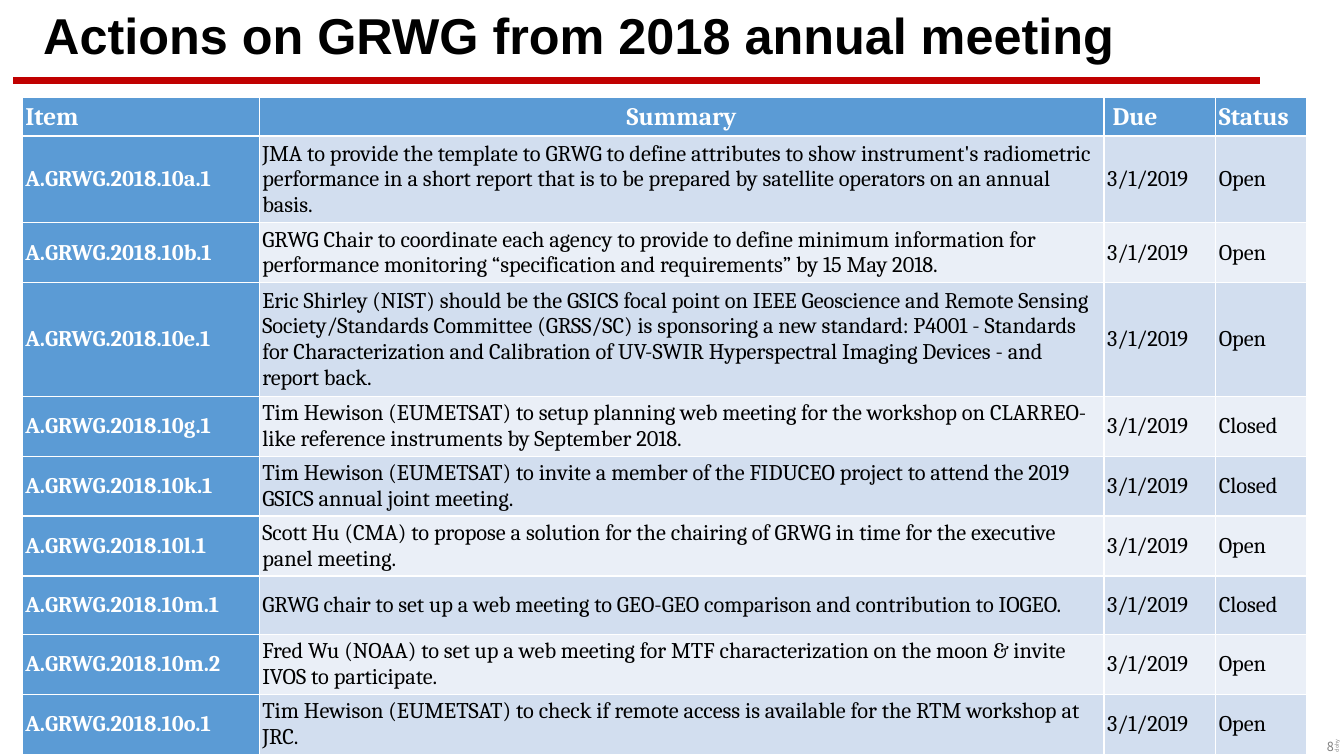
from pptx import Presentation
from pptx.dml.color import RGBColor
from pptx.enum.shapes import MSO_CONNECTOR
from pptx.enum.text import MSO_ANCHOR, PP_ALIGN
from pptx.oxml.ns import qn
from pptx.util import Pt
from lxml.etree import SubElement

# Content
TITLE = "Actions on GRWG from 2018 annual meeting"
HEAD = ("Item", "Summary", " Due", "Status")
DUE = "3/1/2019"
# Item suffix, summary, status, row height
ACTS = [
    ("10a.1", "JMA to provide the template to GRWG to define attributes to show instrument's "
     "radiometric performance in a short report that is to be prepared by satellite "
     "operators on an annual basis.", "Open", 60.5),
    ("10b.1", "GRWG Chair to coordinate each agency to provide to define minimum information for "
     "performance monitoring “specification and requirements” by 15 May 2018.", "Open", 41.8),
    ("10e.1", "Eric Shirley (NIST) should be the GSICS focal point on IEEE Geoscience and Remote "
     "Sensing Society/Standards Committee (GRSS/SC) is sponsoring a new standard: P4001 - "
     "Standards for Characterization and Calibration of UV-SWIR Hyperspectral Imaging "
     "Devices - and report back.", "Open", 78.5),
    ("10g.1", "Tim Hewison (EUMETSAT) to setup planning web meeting for the workshop on "
     "CLARREO-like reference instruments by September 2018.", "Closed", 41.8),
    ("10k.1", "Tim Hewison (EUMETSAT) to invite a member of the FIDUCEO project to attend the "
     "2019 GSICS annual joint meeting.", "Closed", 41.8),
    ("10l.1", "Scott Hu (CMA) to propose a solution for the chairing of GRWG in time for the "
     "executive panel meeting.", "Open", 41.8),
    ("10m.1", "GRWG chair to set up a web meeting to GEO-GEO comparison and contribution to "
     "IOGEO.", "Closed", 41.8),
    ("10m.2", "Fred Wu (NOAA) to set up a web meeting for MTF characterization on the moon & "
     "invite IVOS to participate.", "Open", 41.8),
    ("10o.1", "Tim Hewison (EUMETSAT) to check if remote access is available for the RTM "
     "workshop at JRC.", "Open", 41.8),
]
WIDTHS = (169.2, 603.4, 79.9, 64.8)
HUES = {"black": "000000", "white": "FFFFFF", "red": "C00000", "gray": "808080",
        "blue": "5B9BD5", "dark": "D2DEEF", "light": "EAEFF7"}

# Format values
NOTE = "Noto Sans CJK KR"
FONTS = {
    "title": {"name": "Arial", "size": Pt(36), "bold": True},
    "head": {"name": "Cambria", "size": Pt(18), "bold": True},
    "item": {"name": "Cambria", "size": Pt(16), "bold": True},
    "body": {"name": "Cambria", "size": Pt(16), "bold": False},
    "page": {"name": NOTE, "size": Pt(9)},
    "mark": {"name": NOTE, "size": Pt(3.8)},
}
PAD = {"margin_left": Pt(2.2), "margin_right": Pt(2.2), "margin_top": Pt(2.2),
       "margin_bottom": Pt(2.2), "vertical_anchor": MSO_ANCHOR.MIDDLE}


def shade(hue):
    return RGBColor.from_string(HUES[hue])


def write(frame, text, font, hue, align=PP_ALIGN.LEFT):
    para = frame.paragraphs[0]
    para.alignment = align
    run = para.add_run()
    run.text = text
    for key, val in FONTS[font].items():
        setattr(run.font, key, val)
    run.font.color.rgb = shade(hue)
    return para


def label(box, text, font, hue, align=PP_ALIGN.LEFT, turn=0):
    shape = slide.shapes.add_textbox(*map(Pt, box))
    shape.rotation = turn
    frame = shape.text_frame
    frame.word_wrap = True
    frame.vertical_anchor = MSO_ANCHOR.MIDDLE if font == "title" else MSO_ANCHOR.TOP
    return write(frame, text, font, hue, align)


deck = Presentation()
deck.slide_width, deck.slide_height = Pt(960), Pt(540)
slide = deck.slides.add_slide(deck.slide_layouts[6])

# Red rule under the title
rule = slide.shapes.add_connector(MSO_CONNECTOR.STRAIGHT, Pt(9.4), Pt(57.6), Pt(900), Pt(57.6))
rule.line.color.rgb = shade("red")
rule.line.width = Pt(4.5)
SubElement(rule.element.spPr, qn("a:effectLst"))

# Page number and side mark
label((877.7, 524.2, 82.1, 18), "8", "page", "gray", PP_ALIGN.RIGHT)
label((913.7, 497.5, 82.1, 11.5), "dohy", "mark", "gray", turn=270)

# Action table
rows = [HEAD] + [("A.GRWG.2018." + code, job, DUE, state) for code, job, state, _ in ACTS]
highs = [27.4] + [act[-1] for act in ACTS]
grid = slide.shapes.add_table(len(rows), len(HEAD), Pt(16), Pt(69.8),
                              Pt(sum(WIDTHS)), Pt(sum(highs))).table
grid.first_col = True
for col, wide in zip(grid.columns, WIDTHS):
    col.width = Pt(wide)
for r, (row, high) in enumerate(zip(rows, highs)):
    grid.rows[r].height = Pt(high)
    for c, text in enumerate(row):
        cell = grid.cell(r, c)
        for key, val in PAD.items():
            setattr(cell, key, val)
        edge = r == 0 or c == 0
        cell.fill.solid()
        cell.fill.fore_color.rgb = shade("blue" if edge else "dark" if r % 2 else "light")
        font = "head" if r == 0 else "item" if c == 0 else "body"
        align = PP_ALIGN.CENTER if (r, c) == (0, 1) else PP_ALIGN.LEFT
        write(cell.text_frame, text, font, "white" if edge else "black", align)

# Title
label((23.8, 5.8, 828, 43.2), TITLE, "title", "black").line_spacing = 0.9

deck.save("out.pptx")
